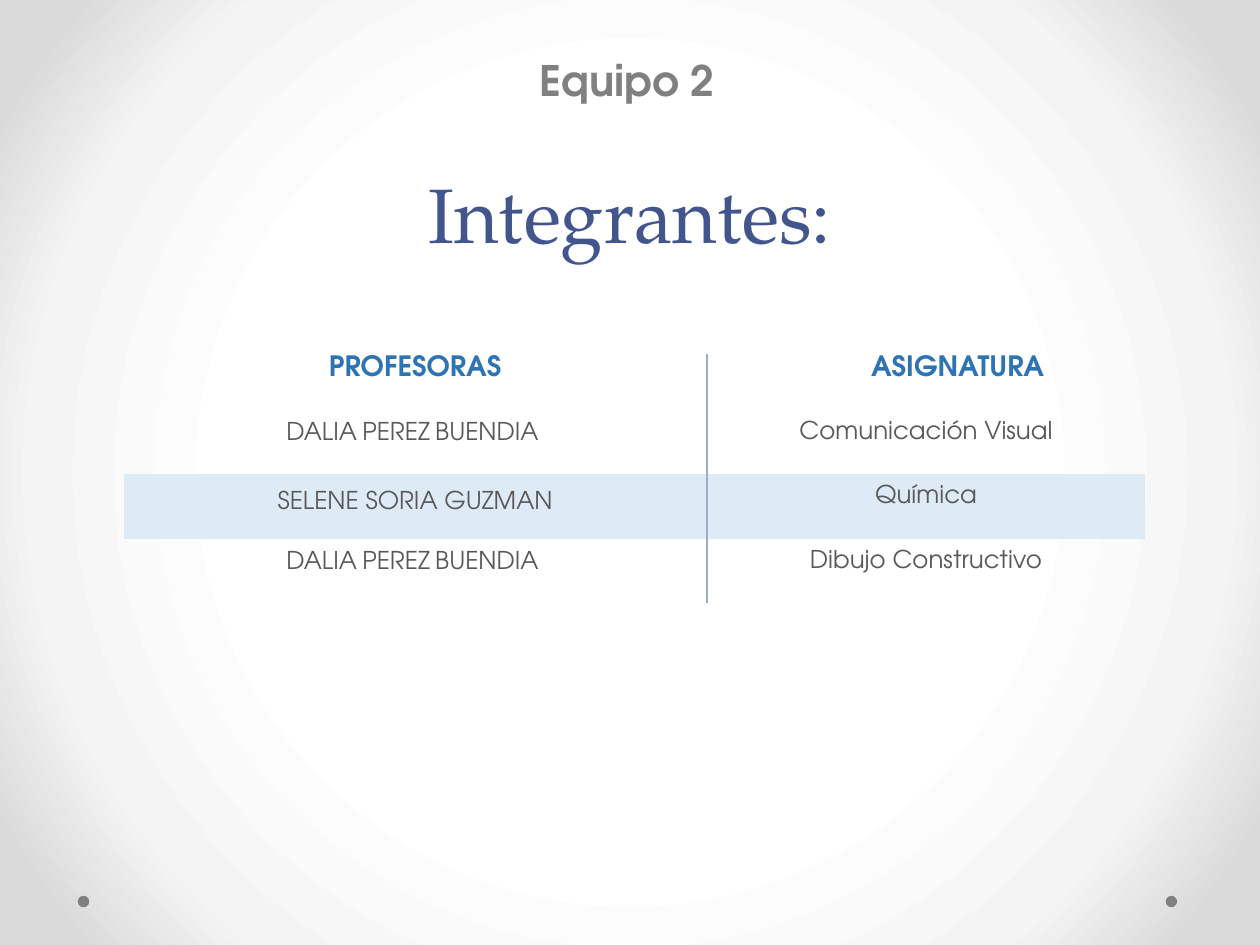
from lxml import etree
from pptx import Presentation
from pptx.dml.color import RGBColor
from pptx.enum import shapes, text
from pptx.oxml import parse_xml
from pptx.oxml.ns import nsdecls, qn
from pptx.util import Cm, Pt

NAVY = RGBColor(0x42, 0x56, 0x8D)
BLUE = RGBColor(0x2E, 0x74, 0xB5)
PALE_BLUE = RGBColor(0xDE, 0xEA, 0xF6)
RULE = RGBColor(0x9B, 0xAD, 0xC4)
GRAY = RGBColor(0x80, 0x80, 0x80)
DARK_GRAY = RGBColor(0x59, 0x59, 0x59)
BLACK = RGBColor(0, 0, 0)
SANS, SERIF, SPACE_FONT = "TeX Gyre Adventor", "TeX Gyre Pagella", "Times New Roman"

TEAM = "Equipo 2"
TITLE = "Integrantes:"
HEADERS = ("PROFESORAS", "ASIGNATURA")
# Each cell is a list of words set apart by narrow spaces, or one phrase
MEMBERS = [
    (["DALIA", "PEREZ", "BUENDIA"], "Comunicación Visual"),
    ("SELENE SORIA GUZMAN", "Química"),
    (["DALIA", "PEREZ", "BUENDIA"], "Dibujo Constructivo"),
]
HIGHLIGHTED_ROW = 2
COLUMN_WIDTHS = (11.76, 8.84)
ROW_HEIGHTS = (1.12, 1.3, 1.3, 1.3)
BACKGROUND_STOPS = [(50, "FFFFFF"), (76, "F4F4F4"), (92, "DADADA")]
NO_STYLE = "{2D5ABB26-0587-4C30-8999-92F81FD0307C}"


def add_run(paragraph, content, size, font, color, bold=False):
    run = paragraph.add_run()
    run.text = content
    run.font.size, run.font.name, run.font.bold = Pt(size), font, bold
    run.font.color.rgb = color


def paint_background(slide):
    slide.background.fill.gradient()
    stops = "".join(f'<a:gs pos="{position * 1000}"><a:srgbClr val="{color}"/></a:gs>'
                    for position, color in BACKGROUND_STOPS)
    gradient = slide.element.find(".//" + qn("a:gradFill"))
    gradient.getparent().replace(gradient, parse_xml(
        f'<a:gradFill {nsdecls("a")} rotWithShape="1"><a:gsLst>{stops}</a:gsLst>'
        '<a:path path="circle"><a:fillToRect l="50000" t="50000" r="50000" b="50000"/>'
        '</a:path></a:gradFill>'))


def add_border(cell, side):
    cell._tc.get_or_add_tcPr().insert(0, parse_xml(
        f'<a:ln{side} {nsdecls("a")} w="12700"><a:solidFill>'
        f'<a:srgbClr val="{RULE}"/></a:solidFill></a:ln{side}>'))


def fill_cell(cell, content, row, column):
    cell.margin_left = cell.margin_right = Cm(0.18)
    cell.margin_top = cell.margin_bottom = 0
    if row == HIGHLIGHTED_ROW:
        cell.fill.solid()
        cell.fill.fore_color.rgb = PALE_BLUE
        if column == 0:
            cell.margin_top = Cm(0.12)
    else:
        cell.fill.background()
    add_border(cell, "L" if column else "R")

    paragraph = cell.text_frame.paragraphs[0]
    paragraph.alignment = text.PP_ALIGN.CENTER
    if row == 0:
        paragraph.line_spacing = 1.07
        if column == 1:
            paragraph._p.get_or_add_pPr().set("marL", str(Cm(1.27)))
        add_run(paragraph, content, 16, SANS, BLUE, True)
        return
    paragraph.line_spacing = 1.5
    if isinstance(content, str):
        add_run(paragraph, content, 14, SANS, DARK_GRAY)
        return
    for word in content:
        add_run(paragraph, word, 14, SANS, DARK_GRAY)
        add_run(paragraph, " ", 12, SPACE_FONT, BLACK)


def add_members_table(slide):
    rows = [HEADERS] + MEMBERS
    frame = slide.shapes.add_table(len(rows), len(HEADERS), Cm(2.49), Cm(7.14),
                                   Cm(sum(COLUMN_WIDTHS)), Cm(sum(ROW_HEIGHTS)))
    table = frame.table
    table.first_row = table.horz_banding = False
    table._tbl.tblPr.find(qn("a:tableStyleId")).text = NO_STYLE
    for column, width in zip(table.columns, COLUMN_WIDTHS):
        column.width = Cm(width)
    for row, height in zip(table.rows, ROW_HEIGHTS):
        row.height = Cm(height)
    for r, contents in enumerate(rows):
        for c, content in enumerate(contents):
            fill_cell(table.cell(r, c), content, r, c)


def main():
    presentation = Presentation()
    presentation.slide_width, presentation.slide_height = Cm(25.4), Cm(19.05)
    slide = presentation.slides.add_slide(presentation.slide_layouts[5])
    paint_background(slide)

    for left in (23.5, 1.57):
        dot = slide.shapes.add_shape(shapes.MSO_SHAPE.OVAL, Cm(left), Cm(18.06),
                                     Cm(0.23), Cm(0.23))
        dot.shadow.inherit = False
        dot.fill.solid()
        dot.fill.fore_color.rgb = GRAY
        dot.line.fill.background()

    title = slide.shapes.title
    title.left, title.top, title.width, title.height = Cm(0), Cm(2.16), Cm(25.4), Cm(3.18)
    title.text_frame.vertical_anchor = text.MSO_ANCHOR.BOTTOM
    paragraph = title.text_frame.paragraphs[0]
    paragraph.alignment = text.PP_ALIGN.CENTER
    paragraph.line_spacing = Pt(58)
    add_run(paragraph, TITLE, 44, SERIF, NAVY)

    add_members_table(slide)

    team_box = slide.shapes.add_textbox(Cm(10.62), Cm(0.97), Cm(4.14), Cm(2.21))
    team_box.text_frame.word_wrap = True
    paragraph = team_box.text_frame.paragraphs[0]
    paragraph.space_before = Pt(4.8)
    add_run(paragraph, TEAM, 24, SANS, GRAY, True)

    presentation.save("out.pptx")


if __name__ == "__main__":
    main()
